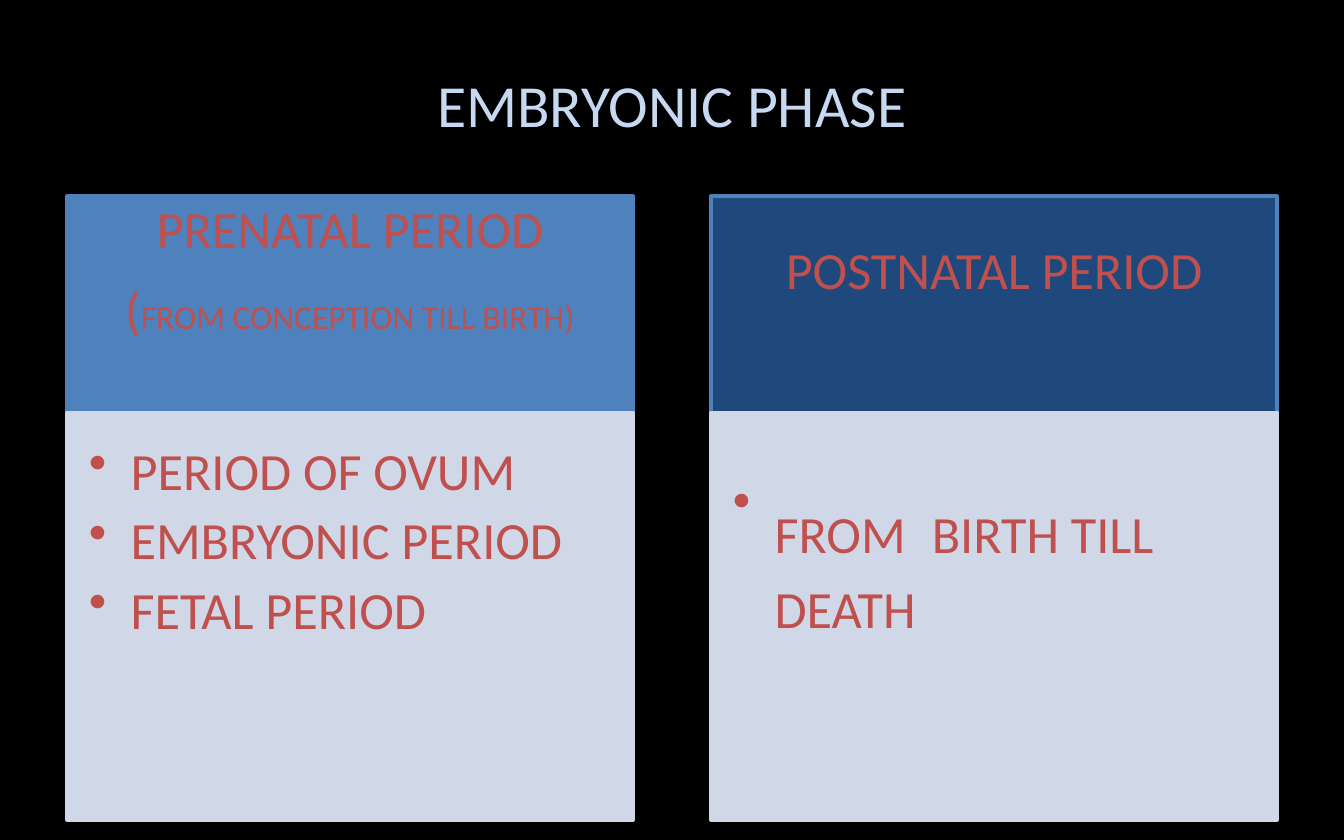
"""Builds the slide on the embryonic phase with its two periods."""
from lxml import etree
from pptx import Presentation
from pptx.dml.color import RGBColor
from pptx.enum.shapes import MSO_SHAPE
from pptx.enum.text import MSO_ANCHOR, PP_ALIGN
from pptx.oxml.ns import qn
from pptx.util import Cm, Pt

RECT = MSO_SHAPE.RECTANGLE
TOP, MID = MSO_ANCHOR.TOP, MSO_ANCHOR.MIDDLE
LEFT, CENTER = PP_ALIGN.LEFT, PP_ALIGN.CENTER

FACE, SIZE = "Calibri", 28
BLACK, PALE, RED = "000000", "C6D9F1", "C0504D"
BLUE, NAVY, GREY = "4F81BD", "1F497D", "D0D8E8"

TITLE = "EMBRYONIC PHASE"
PERIODS = [
    {
        "fill": BLUE,
        "pad": 0,
        "head": [
            [("PRENATAL PERIOD", 28)],
            [("(", 28), ("FROM CONCEPTION TILL BIRTH)", 18)],
        ],
        "body": [
            [("PERIOD OF OVUM", 28)],
            [("EMBRYONIC PERIOD", 28)],
            [("FETAL PERIOD", 28)],
        ],
    },
    {
        "fill": NAVY,
        "pad": 0.77,
        "head": [[("POSTNATAL PERIOD", 28)]],
        "body": [[("FROM", 28), (" ", 62), ("BIRTH TILL DEATH", 28)]],
    },
]

EDGE, WIDE, STEP = 1.27, 10.69, 12.17
HEAD_Y, HEAD_H = 3.71, 4.14
BODY_Y, BODY_H = 7.8, 7.7


def tint(code):
    return RGBColor.from_string(code)


def bullet(para):
    props = para._p.get_or_add_pPr()
    props.set("marL", str(Cm(0.79)))
    props.set("indent", str(Cm(-0.79)))
    mark = etree.Element(qn("a:buChar"), char="•")
    props.insert_element_before(mark, "a:tabLst", "a:defRPr", "a:extLst")


def write(shape, lines, color, size, align, anchor, pads, after=0, dots=False):
    frame = shape.text_frame
    frame.word_wrap = True
    frame.vertical_anchor = anchor
    sides = ("left", "top", "right", "bottom")
    for side, pad in zip(sides, pads):
        setattr(frame, "margin_" + side, Cm(pad))
    for i, line in enumerate(lines):
        para = frame.add_paragraph() if i else frame.paragraphs[0]
        para.alignment = align
        para.space_after = Pt(after)
        font = para.font
        font.name, font.size = FACE, Pt(size)
        font.color.rgb = tint(color)
        for text, points in line:
            run = para.add_run()
            run.text = text
            if points != size:
                run.font.size = Pt(points)
        if dots:
            bullet(para)


def block(slide, x, y, high, fill, line):
    shape = slide.shapes.add_shape(RECT, Cm(x), Cm(y), Cm(WIDE), Cm(high))
    shape.shadow.inherit = False
    shape.fill.solid()
    shape.fill.fore_color.rgb = tint(fill)
    shape.line.color.rgb = tint(line)
    shape.line.width = Pt(2)
    return shape


def main():
    deck = Presentation()
    deck.slide_width, deck.slide_height = Cm(25.4), Cm(15.88)
    slide = deck.slides.add_slide(deck.slide_layouts[6])
    slide.background.fill.solid()
    slide.background.fill.fore_color.rgb = tint(BLACK)

    box = slide.shapes.add_textbox(Cm(EDGE), Cm(0.64), Cm(22.86), Cm(2.64))
    write(box, [[(TITLE, 32)]], PALE, 32, CENTER, MID, (0.25, 0.13, 0.25, 0.13))

    for i, part in enumerate(PERIODS):
        x = EDGE + i * STEP
        head = block(slide, x, HEAD_Y, HEAD_H, part["fill"], BLUE)
        write(head, part["head"], RED, SIZE, CENTER, TOP,
              (0.56, part["pad"], 0.56, 0), after=9.8)
        body = block(slide, x, BODY_Y, BODY_H, GREY, GREY)
        write(body, part["body"], RED, SIZE, LEFT, TOP,
              (0.41, 0.48, 0.56, 0.61), after=3.6, dots=True)

    deck.save("out.pptx")


if __name__ == "__main__":
    main()
